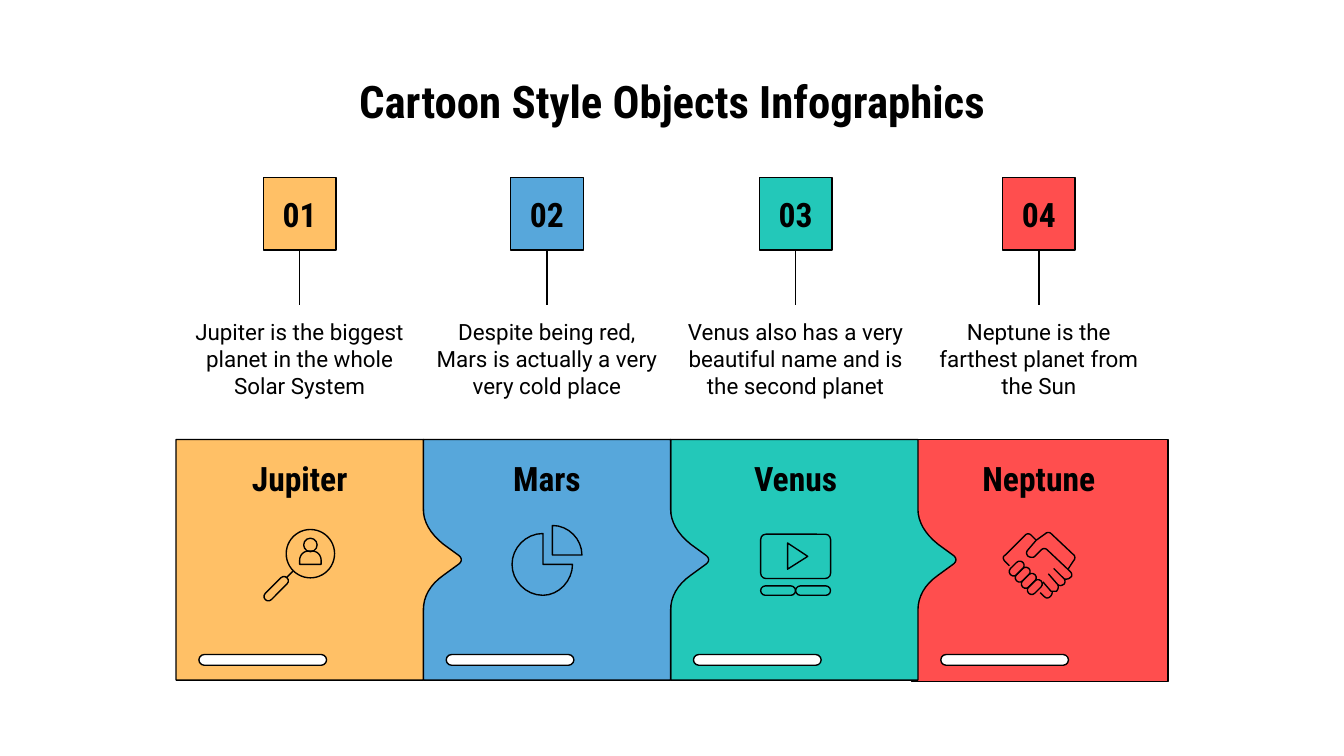
"""Build a slide of four linked panels with badges, notes and line icons."""
from dataclasses import dataclass

from lxml import etree
from pptx import Presentation
from pptx import util as u
from pptx.dml.color import RGBColor
from pptx.enum import shapes, text
from pptx.oxml import ns


@dataclass(frozen=True)
class Theme:
    """Colours, fonts, type sizes and line widths."""
    ink: str = "000000"
    paper: str = "FFFFFF"
    gold: str = "FFC066"
    blue: str = "57A7DB"
    teal: str = "23C8B9"
    red: str = "FF4E4E"
    head: str = "Roboto Condensed"
    body: str = "Roboto"
    title: int = 24
    label: int = 18
    note: int = 12
    edge: float = 0.75


@dataclass(frozen=True)
class Grid:
    """Columns and rows in inches."""
    wide: float = 10
    high: float = 10 * 9 / 16
    left: float = 1.31
    col: float = 1.84
    mids: tuple = (2.23, 4.07, 5.92, 7.73)
    badge: float = 1.32
    box: float = 0.54
    note: float = 2.27
    panel: float = 3.27
    deep: float = 1.8
    label: float = 3.36
    icon: float = 4.2
    bar: float = 4.87


T, G = Theme(), Grid()
KIND = shapes.MSO_SHAPE
UNIT = u.Inches(0.01)

ARROW = ("M 0 0 L 0 179 L 184 179 L 184 127 C 184 117 189 108 199 101 "
         "L 210 93 C 213 91 213 88 210 86 L 199 78 C 189 70 184 61 184 52 L 184 0 Z")
BUST = "M 0 0 L 0 -3 C 0 -7 3 -10 7 -10 L 9 -10 C 13 -10 16 -7 16 -3 L 16 0 Z"
PIE = ("M -3 -23 L -3 0 L 19 0 C 19 12 9 23 -3 23 C -16 23 -26 12 -26 0 "
       "C -26 -12 -16 -23 -3 -23 Z")
SLICE = "M 4 -29 C 16 -29 26 -19 26 -7 L 4 -7 Z"
PLAY = "M -6 -16 L 9 -6 L -6 3.5 Z"
HANDS = ("M -22 1 L -25 -2 C -27 -4 -27 -6 -25 -7 L -10 -22 C -9 -23 -7 -23 -6 -22 L -2 -18 "
         "M 22 3 L 26 -3 C 27 -4 27 -6 26 -7 L 9 -23 C 8 -24 6 -24 5 -23 L -2 -18 "
         "L -8 -11 C -10 -9 -9 -7 -8 -6 C -6 -5 -4 -5 -3 -6 L 2 -11 C 3 -12 5 -12 6 -11 "
         "L 23 5 C 25 7 25 9 23 10 C 22 11 20 11 19 11 L 11 3 "
         "M 19 11 C 20 13 19 15 18 15 C 17 16 15 16 14 15 L 7 7 "
         "M 14 15 C 15 17 14 19 13 20 C 12 20 10 20 9 20 L 3 13 "
         "M 10 20 C 10 23 8 25 6 25 C 5 25 4 24 1 21")


def paint(shape, fill=None):
    """Give a shape a flat fill and an ink line."""
    shape.shadow.inherit = False
    if fill:
        shape.fill.solid()
        shape.fill.fore_color.rgb = RGBColor.from_string(fill)
    else:
        shape.fill.background()
    shape.line.color.rgb = RGBColor.from_string(T.ink)
    shape.line.width = u.Pt(T.edge)
    return shape


def write(shape, words, size, font=T.head, bold=True, mid=True):
    """Put centred words in a shape."""
    frame = shape.text_frame
    anchor = text.MSO_ANCHOR.MIDDLE if mid else text.MSO_ANCHOR.TOP
    form = {"word_wrap": True, "auto_size": text.MSO_AUTO_SIZE.NONE, "vertical_anchor": anchor}
    form.update({f"margin_{side}": u.Inches(0.1) for side in ("left", "top", "right", "bottom")})
    for key, value in form.items():
        setattr(frame, key, value)
    line = frame.paragraphs[0]
    line.text, line.alignment = words, text.PP_ALIGN.CENTER
    face = line.runs[0].font
    for key, value in {"name": font, "size": u.Pt(size), "bold": bold}.items():
        setattr(face, key, value)
    face.color.rgb = RGBColor.from_string(T.ink)


def block(slide, kind, box, fill=None):
    """Add a preset shape in a box of inches."""
    shape = paint(slide.shapes.add_shape(kind, *map(u.Inches, box)), fill)
    if kind == KIND.ROUNDED_RECTANGLE:
        shape.adjustments[0] = 0.5
    return shape


def words(slide, box, *args, **form):
    """Add a text box."""
    write(slide.shapes.add_textbox(*map(u.Inches, box)), *args, **form)


def join(slide, start, end):
    """Add a thin ink line between two points."""
    ends = map(u.Inches, (*start, *end))
    line = slide.shapes.add_connector(shapes.MSO_CONNECTOR.STRAIGHT, *ends)
    line.line.color.rgb = RGBColor.from_string(T.ink)
    line.line.width = u.Pt(T.edge)
    etree.SubElement(line._element.spPr, ns.qn("a:effectLst"))
    return line


def bend(a, b, c, d, steps=8):
    """Return points along a cubic curve."""
    marks = [n / steps for n in range(1, steps + 1)]
    return [tuple((1 - t) ** 3 * p + 3 * t * (1 - t) ** 2 * q + 3 * t * t * (1 - t) * r + t ** 3 * s
                  for p, q, r, s in zip(a, b, c, d)) for t in marks]


def trace(slide, spot, route, fill=None):
    """Draw a route of moves, lines and curves in hundredths of an inch."""
    parts, pen, build = iter(route.split()), (0, 0), None
    for step in parts:
        if step == "Z":
            build.add_line_segments([], close=True)
            continue
        count = 3 if step == "C" else 1
        dots = [tuple(float(next(parts)) * UNIT for _ in "xy") for _ in range(count)]
        if build is None:
            build = slide.shapes.build_freeform(*dots[0])
        elif step == "M":
            build.move_to(*dots[0])
        else:
            build.add_line_segments(bend(pen, *dots) if step == "C" else dots, close=False)
        pen = dots[-1]
    return paint(build.convert_to_shape(*map(u.Inches, spot)), fill)


def mark(slide, kind, spot, mid, size, turn=0):
    """Add an outlined icon part about its middle, in hundredths of an inch."""
    at = [s + (m - w / 2) / 100 for s, m, w in zip(spot, mid, size)]
    shape = block(slide, kind, (*at, *(w / 100 for w in size)))
    shape.rotation = turn
    return shape


def lens(slide, spot):
    """Draw a magnifier over a person."""
    x, y = spot
    mark(slide, KIND.OVAL, spot, (8, -8), (36, 36))
    mark(slide, KIND.OVAL, spot, (8, -14.5), (10, 10))
    trace(slide, spot, BUST)
    join(slide, (x - 0.05, y + 0.05), (x - 0.1, y + 0.1))
    mark(slide, KIND.ROUNDED_RECTANGLE, spot, (-17.5, 18), (23, 6.5), -45)


def chart(slide, spot):
    """Draw a pie with one slice pulled out."""
    for route in (PIE, SLICE):
        trace(slide, spot, route)


def screen(slide, spot):
    """Draw a video player."""
    mark(slide, KIND.ROUNDED_RECTANGLE, spot, (0, -6), (52, 33)).adjustments[0] = 0.12
    for x in (-13, 13):
        mark(slide, KIND.ROUNDED_RECTANGLE, spot, (x, 19.5), (26, 7))
    trace(slide, spot, PLAY)


def shake(slide, spot):
    """Draw a handshake."""
    trace(slide, spot, HANDS)
    for n in range(4):
        mark(slide, KIND.ROUNDED_RECTANGLE, spot, (4.5 * n - 16.5, 4.6 * n + 3), (13, 6.5), -45)


ITEMS = [
    ("Jupiter", "Jupiter is the biggest planet in the whole Solar System", T.gold, lens),
    ("Mars", "Despite being red, Mars is actually a very very cold place", T.blue, chart),
    ("Venus", "Venus also has a very beautiful name and is the second planet", T.teal, screen),
    ("Neptune", "Neptune is the farthest planet from the Sun", T.red, shake),
]


def column(slide, n, name, note, fill, icon):
    """Add one column: panel, label, note, icon, bar and badge."""
    left, mid = G.left + n * G.col, G.mids[n]
    if n == len(ITEMS) - 1:
        block(slide, KIND.RECTANGLE, (left - 0.05, G.panel, 1.91, G.deep), fill)
    else:
        trace(slide, (left, G.panel), ARROW, fill)
    start = mid - G.col / 2
    words(slide, (start, G.label, G.col, 0.39), name, T.label)
    words(slide, (start, G.note, G.col, 0.92), note, T.note, font=T.body, bold=False, mid=False)
    icon(slide, (mid, G.icon))
    block(slide, KIND.ROUNDED_RECTANGLE, (left + 0.17, G.bar, 0.95, 0.08), T.paper)
    badge = block(slide, KIND.RECTANGLE, (mid - G.box / 2, G.badge, G.box, G.box), fill)
    write(badge, f"{n + 1:02}", T.label)
    join(slide, (mid, G.badge + G.box), (mid, G.note)).begin_connect(badge, 2)


def main():
    """Build and save the slide."""
    deck = Presentation()
    deck.slide_width, deck.slide_height = u.Inches(G.wide), u.Inches(G.high)
    slide = deck.slides.add_slide(deck.slide_layouts[5])
    title = slide.shapes.title
    for key, share in {"left": 0.05, "width": 0.9}.items():
        setattr(title, key, u.Inches(G.wide * share))
    for key, share in {"top": 0.08, "height": 0.11}.items():
        setattr(title, key, u.Inches(G.high * share))
    write(title, "Cartoon Style Objects Infographics", T.title, mid=False)
    for n, item in reversed(list(enumerate(ITEMS))):
        column(slide, n, *item)
    deck.save("out.pptx")


if __name__ == "__main__":
    main()
